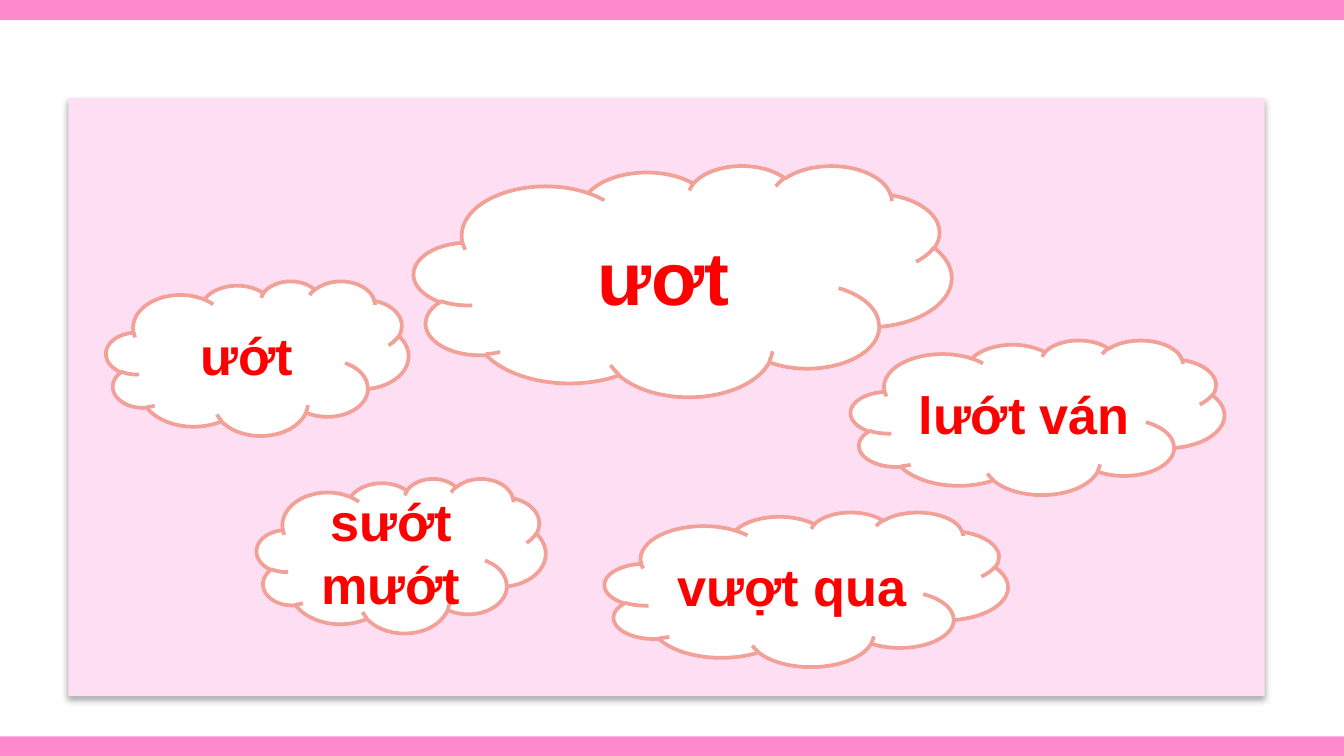
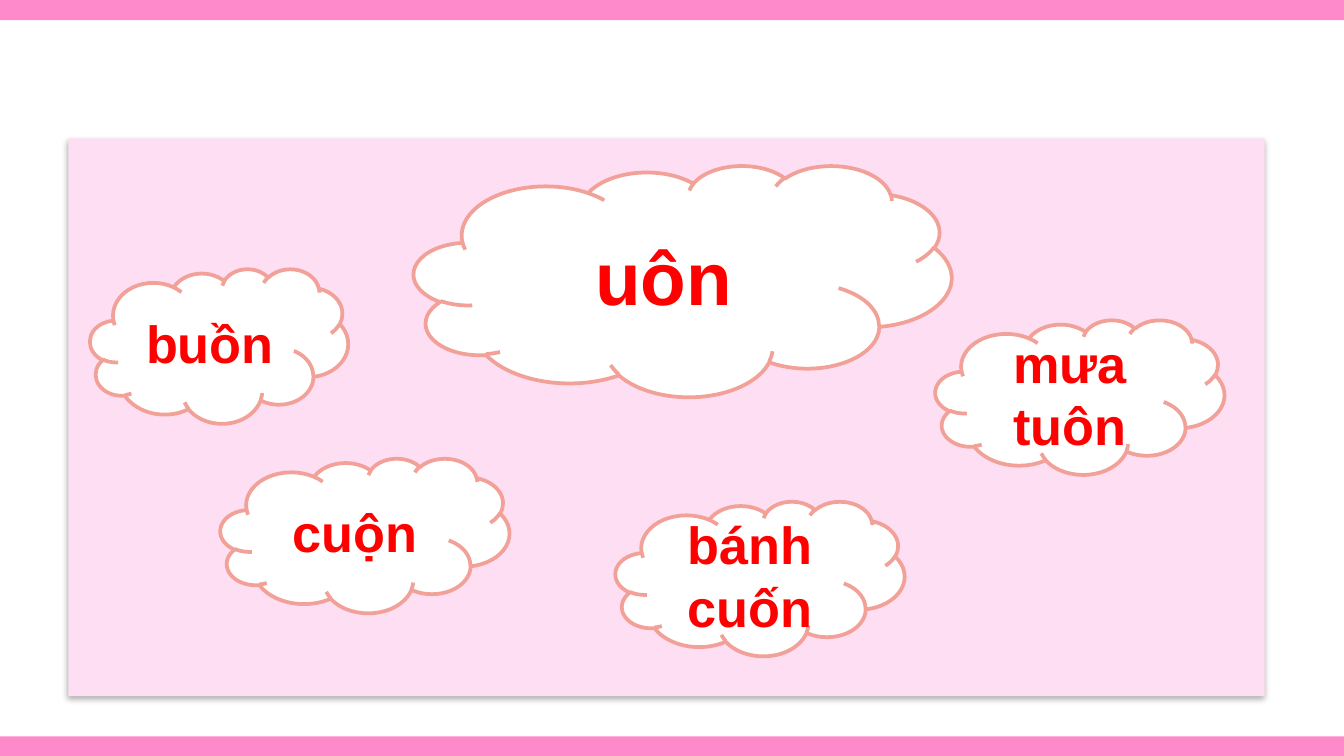
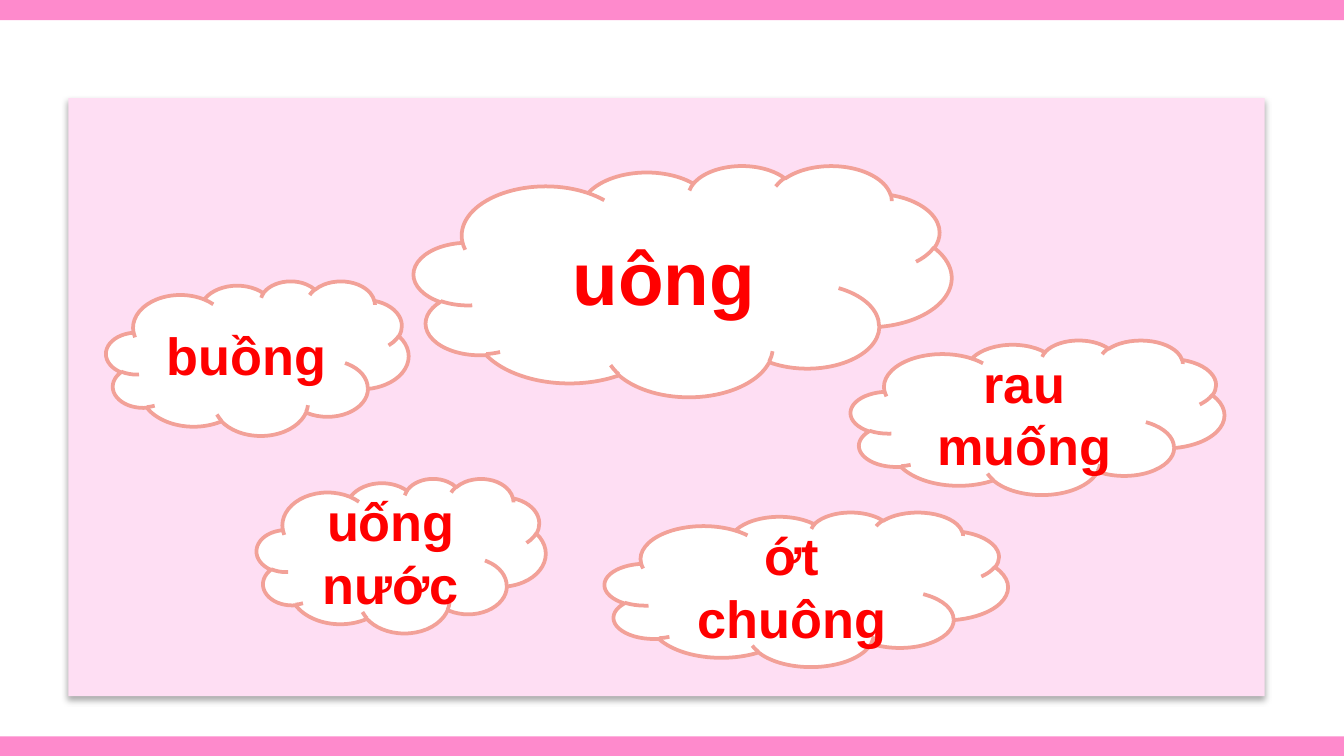
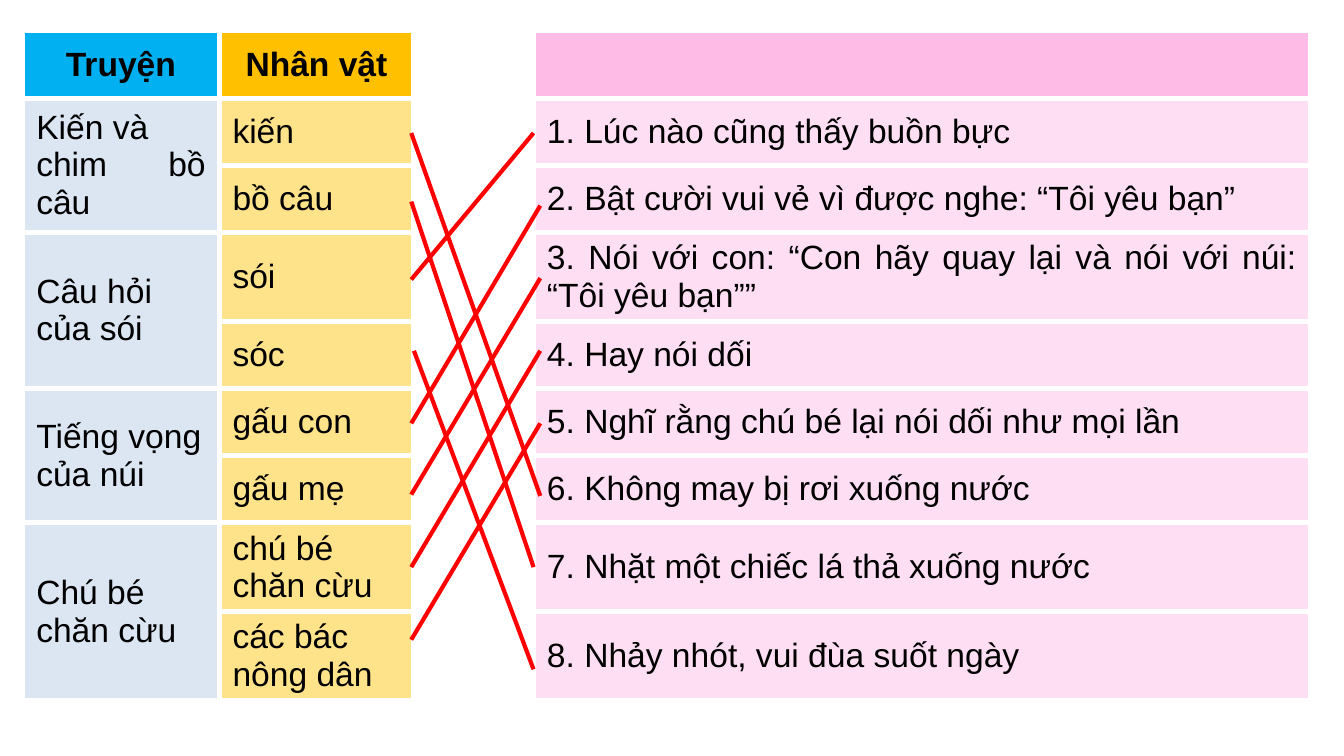
from pptx import Presentation
from pptx.dml.color import RGBColor
from pptx.enum.shapes import MSO_CONNECTOR as LINK, MSO_SHAPE as FORM
from pptx.enum.text import MSO_ANCHOR as ANCHOR, PP_ALIGN as ALIGN
from pptx.oxml import parse_xml
from pptx.oxml.ns import nsdecls
from pptx.util import Pt

PX = 9144  # one px is a hundredth of an inch

BLACK = RGBColor(0x00, 0x00, 0x00)
WHITE = RGBColor(0xFF, 0xFF, 0xFF)
RED = RGBColor(0xFF, 0x00, 0x00)
PINK = RGBColor(0xFE, 0x8A, 0xCC)
PALE = RGBColor(0xFE, 0xDE, 0xF3)
ROSE = RGBColor(0xFD, 0xBB, 0xE5)
CORAL = RGBColor(0xF2, 0xA1, 0x98)
BLUE = RGBColor(0x00, 0xB0, 0xF0)
MIST = RGBColor(0xDC, 0xE6, 0xF2)
GOLD = RGBColor(0xFF, 0xC0, 0x00)
SAND = RGBColor(0xFF, 0xE3, 0x8B)

SHADE = (f'<a:effectLst {nsdecls("a")}><a:outerShdw blurRad="44450" dist="27940" '
         'dir="5400000" algn="ctr"><a:srgbClr val="000000"><a:alpha val="32000"/>'
         '</a:srgbClr></a:outerShdw></a:effectLst>')
PLAIN = f'<a:effectLst {nsdecls("a")}/>'


def put(slide, form, box, fill):
    shape = slide.shapes.add_shape(form, *[n * PX for n in box])
    shape.shadow.inherit = False
    shape.fill.solid()
    shape.fill.fore_color.rgb = fill
    shape.line.fill.background()
    return shape


def write(frame, text, align, style):
    frame.text = text
    for para in frame.paragraphs:
        para.alignment = align
        para.font.color.rgb = style["color"]
        for run in para.runs:
            run.font.color.rgb = style["color"]
            for key in ("name", "size", "bold"):
                setattr(run.font, key, style[key])


deck = Presentation()
deck.slide_width, deck.slide_height = 1000 * PX, 5143500
blank = deck.slide_layouts[6]

# Word clouds: the sound in the large cloud, its words around it
HEAD = (308, 123, 400, 172)
WIDE = [(79, 209, 225), (191, 356, 215), (450, 381, 300), (633, 253, 278)]
NEAR = [(67, 200, 192), (164, 341, 215), (458, 373, 215), (696, 238, 215)]
sounds = [
    ("ươt", 73, WIDE, ["ướt", "sướt mướt", "vượt qua", "lướt ván"]),
    ("uôn", 103, NEAR, ["buồn", "cuộn", "bánh cuốn", "mưa tuôn"]),
    ("uông", 73, WIDE, ["buồng", "uống nước", "ớt chuông", "rau muống"]),
]
for sound, top, spots, words in sounds:
    slide = deck.slides.add_slide(blank)
    for y in (548, 0):
        put(slide, FORM.RECTANGLE, (0, y, 1000, 15), PINK)
    panel = put(slide, FORM.RECTANGLE, (51, top, 890, 518 - top), PALE)
    props = panel._element.spPr
    props.replace(props.find("{*}effectLst"), parse_xml(SHADE))

    clouds = [(sound, HEAD, 40)]
    clouds += [(word, (*spot, 115), 28) for word, spot in zip(words, spots)]
    for word, box, size in clouds:
        cloud = put(slide, FORM.CLOUD, box, WHITE)
        cloud.line.color.rgb = CORAL
        cloud.line.width = Pt(2)
        frame = cloud.text_frame
        frame.word_wrap = True
        frame.vertical_anchor = ANCHOR.MIDDLE
        write(frame, word, ALIGN.CENTER,
              {"name": "Arial", "size": Pt(size), "bold": True, "color": RED})

# Matching table: story, character, gap, deed
slide = deck.slides.add_slide(blank)
rows = [
    ("Truyện", "Nhân vật", ""),
    ("Kiến và\nchim bồ câu", "kiến", "1. Lúc nào cũng thấy buồn bực"),
    ("", "bồ câu", "2. Bật cười vui vẻ vì được nghe: “Tôi yêu bạn”"),
    ("Câu hỏi\ncủa sói", "sói",
     "3. Nói với con: “Con hãy quay lại và nói với núi: “Tôi yêu bạn””"),
    ("", "sóc", "4. Hay nói dối"),
    ("Tiếng vọng\ncủa núi", "gấu con", "5. Nghĩ rằng chú bé lại nói dối như mọi lần"),
    ("", "gấu mẹ", "6. Không may bị rơi xuống nước"),
    ("Chú bé\nchăn cừu", "chú bé chăn cừu", "7. Nhặt một chiếc lá thả xuống nước"),
    ("", "các bác nông dân", "8. Nhảy nhót, vui đùa suốt ngày"),
]
table = slide.shapes.add_table(
    len(rows), 4, 17 * PX, 23 * PX, 958 * PX, 450 * PX).table
for col, wide in zip(table.columns, (146, 145, 89, 578)):
    col.width = wide * PX
for row in table.rows:
    row.height = 50 * PX

tops = (BLUE, GOLD, WHITE, ROSE)
fills = (MIST, SAND, WHITE, PALE)
for r, (story, who, deed) in enumerate(rows):
    for c, text in enumerate((story, who, "", deed)):
        cell = table.cell(r, c)
        props = cell._tc.get_or_add_tcPr()
        for side in "LRTB":
            props.append(parse_xml(
                f'<a:ln{side} {nsdecls("a")} w="38100"><a:solidFill>'
                f'<a:srgbClr val="{WHITE}"/></a:solidFill></a:ln{side}>'))
        cell.fill.solid()
        cell.fill.fore_color.rgb = (fills if r else tops)[c]
        cell.vertical_anchor = ANCHOR.MIDDLE
        if r == 0:
            align = ALIGN.CENTER
        elif c == 1 and r > 6:
            align = ALIGN.LEFT
        else:
            align = ALIGN.JUSTIFY
        if text:
            write(cell.text_frame, text, align,
                  {"name": "Arial", "size": Pt(18), "bold": r == 0, "color": BLACK})

# Merged stories and the gap column
for r in range(1, len(rows), 2):
    table.cell(r, 0).merge(table.cell(r + 1, 0))
table.cell(0, 2).merge(table.cell(len(rows) - 1, 2))

# Answer lines from character to deed
links = [
    (306, 208, 397, 99), (306, 315, 402, 153), (306, 368, 402, 207),
    (306, 422, 402, 261), (306, 476, 402, 315), (306, 99, 402, 369),
    (306, 150, 397, 422), (308, 261, 397, 498),
]
for ends in links:
    link = slide.shapes.add_connector(LINK.STRAIGHT, *[n * PX for n in ends])
    link.line.color.rgb = RED
    link.line.width = Pt(2.25)
    link._element.spPr.append(parse_xml(PLAIN))

deck.save("out.pptx")
